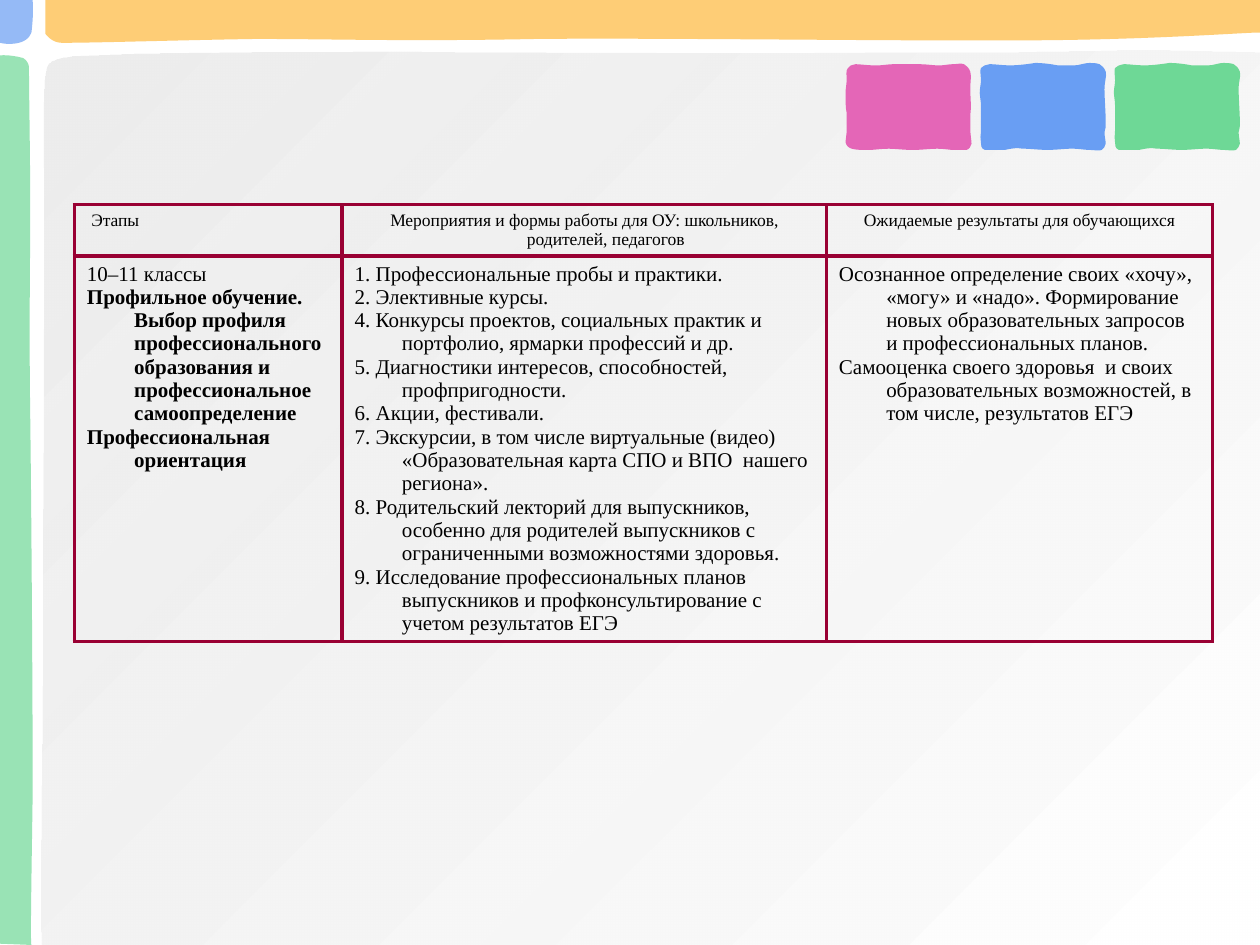
from lxml import etree
from pptx import Presentation
from pptx.dml.color import RGBColor
from pptx.enum.text import PP_ALIGN
from pptx.oxml.ns import qn
from pptx.util import Pt

LEFT, CENTER = PP_ALIGN.LEFT, PP_ALIGN.CENTER
FONT = "Times New Roman"
BLACK = RGBColor(0x00, 0x00, 0x00)
WHITE = RGBColor(0xFF, 0xFF, 0xFF)
GREY = RGBColor(0xE6, 0xE6, 0xE6)
ORANGE = RGBColor(0xFE, 0xB9, 0x3C)
GREEN = RGBColor(0x6E, 0xD8, 0x96)
BLUE = RGBColor(0x69, 0x9E, 0xF3)
PINK = RGBColor(0xE4, 0x66, 0xB7)
CRIMSON = RGBColor(0x99, 0x00, 0x33)
HANGING = 27

# Outlines in points from the box corner: 2 numbers are a line, 6 a Bezier curve
PANEL = [
    (697, 513), (697, 3.2), (614.9, 0.4, 592.6, 3.2, 524.2, 3.2),
    (456.5, 3.2, 373, 4, 288.8, 3.2), (204.5, 2.5, 65.6, 2.5, 18, 5.4),
    (2.9, 7.6, 2.9, 8.3, 2.2, 25.6), (1.5, 42.1, 2.2, 52.2, 2.2, 104),
    (2.2, 157.3, 1.5, 269.6, 1.5, 337.3), (1.5, 405.7, 0, 449.6, 0.8, 513),
]
TOP_BAND = [
    (694, 0), (694, 18.7), (694, 18, 642.2, 22.3, 573, 23),
    (503.9, 23.8, 356.3, 21.6, 280.7, 22.3), (205.1, 23.8, 164.8, 22.3, 120.2, 22.3),
    (74.8, 23, 29.4, 24.5, 9.3, 24.5), (3.5, 24.5, 0, 19.4, 0, 19.4), (0, 0),
]
SIDE_BAND = [
    (0, 508.3), (18, 509), (17.3, 509, 18, 471.6, 18.7, 421.2),
    (18.7, 370.8, 18, 262, 17.3, 206.6), (16.6, 151.9, 17.3, 121.6, 17.3, 89.2),
    (17.3, 56.1, 16.6, 23, 16.6, 7.9), (16.6, 3.6, 13, 2.1, 13, 2.1),
    (5, 0, 0, 0.7, 0, 0.7),
]
CORNER = [
    (0, 0), (18.7, 0), (19.4, 8.6, 18, 18.7, 18, 18.7),
    (16.6, 22.3, 13.7, 23.8, 10.8, 24.5), (5, 25.9, 0, 24.5, 0, 24.5),
]
PINK_TILE = [
    (1.4, 2.9), (2.2, 1.4, 2.9, 1.4, 5.8, 0.7), (7.9, 0.7, 13, 1.4, 17.3, 1.4),
    (21.6, 1.4, 23.8, 0.7, 28.1, 0.7), (33.1, 0.7, 38.9, 0.7, 42.5, 0.7),
    (46.1, 0.7, 50.4, 1.4, 53.3, 1.4), (56.2, 1.4, 59, 0.7, 61.2, 0.7),
    (63.4, 0.7, 66.2, 0, 67.7, 0.7), (69.1, 1.4, 70.6, 2.9, 71.3, 5),
    (72, 7.9, 71.3, 10, 71.3, 15.1), (71.3, 19.4, 72, 25.2, 71.3, 29.5),
    (71.3, 33.1, 71.3, 34.6, 71.3, 37.4), (71.3, 41, 72, 44.6, 72, 46.1),
    (71.3, 47.5, 71.3, 49, 69.1, 49.7), (67.7, 49.7, 64.1, 49.7, 61.9, 49.7),
    (59.8, 49.7, 56.2, 49, 52.6, 49), (48.2, 49, 43.2, 49.7, 38.2, 49.7),
    (33.8, 49.7, 28.1, 49, 24.5, 49), (20.2, 49, 16.6, 49.7, 13, 49.7),
    (9.4, 49.7, 5.8, 49.7, 3.6, 49), (1.4, 48.2, 0.7, 47.5, 0, 45.4),
    (0, 43.9, 0.7, 41, 0.7, 37.4), (0.7, 33.8, 0.7, 32.4, 0.7, 28.8),
    (0, 25.9, 0, 21.6, 0, 18), (0, 13.7, 0.7, 12.2, 0.7, 10),
    (0.7, 7.2, 0, 4.3, 1.4, 2.9),
]
TILE = [
    (0.7, 2.9), (2.2, 1.4, 2.9, 1.4, 5.8, 0.7), (8.6, 0.7, 13, 1.4, 17.3, 1.4),
    (21.6, 1.4, 27.4, 0.7, 31.7, 0), (36, 0, 41, 0.7, 44.6, 1.4),
    (48.2, 1.4, 51.1, 1.4, 54, 1.4), (56.9, 1.4, 59.8, 0, 62.6, 0),
    (64.8, 0, 66.2, 0, 68.4, 0.7), (69.8, 1.4, 71.3, 2.9, 72, 5),
    (72.7, 7.9, 71.3, 10, 71.3, 15.1), (71.3, 19.4, 72, 29.5, 72, 33.1),
    (72, 36.7, 72, 37.4, 71.3, 39.6), (71.3, 41.8, 72, 44.6, 72, 46.1),
    (71.3, 47.5, 71.3, 49, 69.8, 49.7), (68.4, 50.4, 64.8, 49.7, 62.6, 49.7),
    (59.8, 49.7, 56.9, 49, 52.6, 49), (49, 49, 43.2, 49.7, 38.9, 49.7),
    (33.8, 49.7, 28.8, 49, 24.5, 49), (20.9, 48.2, 18, 49, 14.4, 49.7),
    (10.8, 49.7, 5, 49.7, 2.9, 49.7), (0.7, 49, 0.7, 46.8, 0.7, 45.4),
    (0, 43.2, 0.7, 41.8, 0.7, 38.2), (0.7, 34.6, 0.7, 28.1, 0.7, 24.5),
    (0.7, 20.9, 0, 19.4, 0, 17.3), (0, 14.4, 0.7, 12.2, 0.7, 10),
    (0.7, 7.2, 0, 4.3, 0.7, 2.9),
]

HEADERS = [
    (" Этапы", LEFT),
    ("Мероприятия и формы работы для ОУ: школьников, родителей, педагогов ", CENTER),
    ("Ожидаемые результаты для обучающихся", CENTER),
]
STAGES = [
    "10–11 классы",
    "Профильное обучение. Выбор профиля профессионального образования "
    "и профессиональное самоопределение",
    "Профессиональная ориентация",
]
ACTIVITIES = [
    "1. Профессиональные пробы и практики.",
    "2. Элективные курсы.",
    "4. Конкурсы проектов, социальных практик и портфолио, ярмарки профессий и др.",
    "5. Диагностики интересов, способностей, профпригодности.",
    "6. Акции, фестивали.",
    "7. Экскурсии, в том числе виртуальные (видео) «Образовательная карта СПО и ВПО  "
    "нашего региона».",
    "8. Родительский лекторий для выпускников, особенно для родителей выпускников "
    "с ограниченными возможностями здоровья.",
    "9. Исследование профессиональных планов выпускников и профконсультирование "
    "с учетом результатов ЕГЭ",
]
RESULTS = [
    "Осознанное определение своих «хочу», «могу» и «надо». Формирование  "
    "новых образовательных запросов и профессиональных планов.",
    "Самооценка своего здоровья  и своих образовательных возможностей, "
    "в том числе, результатов ЕГЭ",
]


def set_alpha(sp, percent):
    color = sp.fill._xPr.find(".//" + qn("a:srgbClr"))
    etree.SubElement(color, qn("a:alpha"), val=str(percent * 1000))


def add_blob(s, outline, left, top, color, alpha=100):
    points = [(Pt(left + seg[i]), Pt(top + seg[i + 1]))
              for seg in outline for i in range(0, len(seg), 2)]
    builder = s.shapes.build_freeform(*points[0])
    builder.add_line_segments(points[1:], close=True)
    sp = builder.convert_to_shape()
    # Merge each three segments of a curve into one Bezier
    lines = iter(sp._element.findall(".//" + qn("a:lnTo")))
    for seg in outline[1:]:
        line = next(lines)
        if len(seg) == 6:
            line.tag = qn("a:cubicBezTo")
            for extra in (next(lines), next(lines)):
                line.append(extra[0])
                extra.getparent().remove(extra)
    sp.shadow.inherit = False
    sp.line.fill.background()
    sp.fill.solid()
    sp.fill.fore_color.rgb = color
    if alpha < 100:
        set_alpha(sp, alpha)
    return sp


def add_frame(s, width, height):
    # Grey panel fading to white
    panel = add_blob(s, PANEL, width - 697, height - 513, WHITE)
    panel.fill.gradient()
    panel.fill.gradient_angle = 315
    for stop, color in zip(panel.fill.gradient_stops, (GREY, WHITE)):
        stop.color.rgb = color
    set_alpha(panel, 70)
    # Bands along the edges and the corner between them
    add_blob(s, TOP_BAND, width - 694, 0, ORANGE, 70)
    add_blob(s, SIDE_BAND, 0, height - 509, GREEN, 70)
    add_blob(s, CORNER, 0, 0, BLUE, 70)


def add_tiles(s, left, top, pitch):
    tiles = ((PINK_TILE, PINK), (TILE, BLUE), (TILE, GREEN))
    for i, (outline, color) in enumerate(tiles):
        add_blob(s, outline, left + i * pitch, top, color)


def add_text(tf, text, size=12, bold=False, align=LEFT, first=False):
    p = tf.paragraphs[0] if first else tf.add_paragraph()
    p.alignment = align
    pPr = p._p.get_or_add_pPr()
    pPr.set("marL", str(Pt(HANGING)))
    pPr.set("indent", str(-Pt(HANGING)))
    r = p.add_run()
    r.text = text
    r.font.name, r.font.size, r.font.bold = FONT, Pt(size), bold
    r.font.color.rgb = BLACK


def style_cell(cell):
    cell.fill.background()
    tcPr = cell._tc.get_or_add_tcPr()
    for i, side in enumerate(("lnL", "lnR", "lnT", "lnB")):
        ln = etree.Element(qn("a:" + side), w=str(Pt(2.25)))
        fill = etree.SubElement(ln, qn("a:solidFill"))
        etree.SubElement(fill, qn("a:srgbClr"), val=str(CRIMSON))
        tcPr.insert(i, ln)


def add_stage_table(s, left, top, widths, heights):
    table = s.shapes.add_table(len(heights), len(widths), Pt(left), Pt(top),
                               Pt(sum(widths)), Pt(sum(heights))).table
    table.first_row = table.horz_banding = False
    for col, width in zip(table.columns, widths):
        col.width = Pt(width)
    for row, height in zip(table.rows, heights):
        row.height = Pt(height)
    for cell in table.iter_cells():
        style_cell(cell)
    # Header row, then body row
    for i, (text, align) in enumerate(HEADERS):
        add_text(table.cell(0, i).text_frame, text, size=10, align=align, first=True)
    for i, texts in enumerate((STAGES, ACTIVITIES, RESULTS)):
        for n, text in enumerate(texts):
            add_text(table.cell(1, i).text_frame, text, bold=i == 0 and n > 0, first=n == 0)


def main():
    prs = Presentation()
    prs.slide_width, prs.slide_height = Pt(720), Pt(540)
    s = prs.slides.add_slide(prs.slide_layouts[6])
    add_frame(s, 720, 540)
    add_tiles(s, 483.2, 36, 76.65)
    add_stage_table(s, 42.5, 117, (153, 276.75, 220.5), (20, 160))
    prs.save("out.pptx")


if __name__ == "__main__":
    main()
